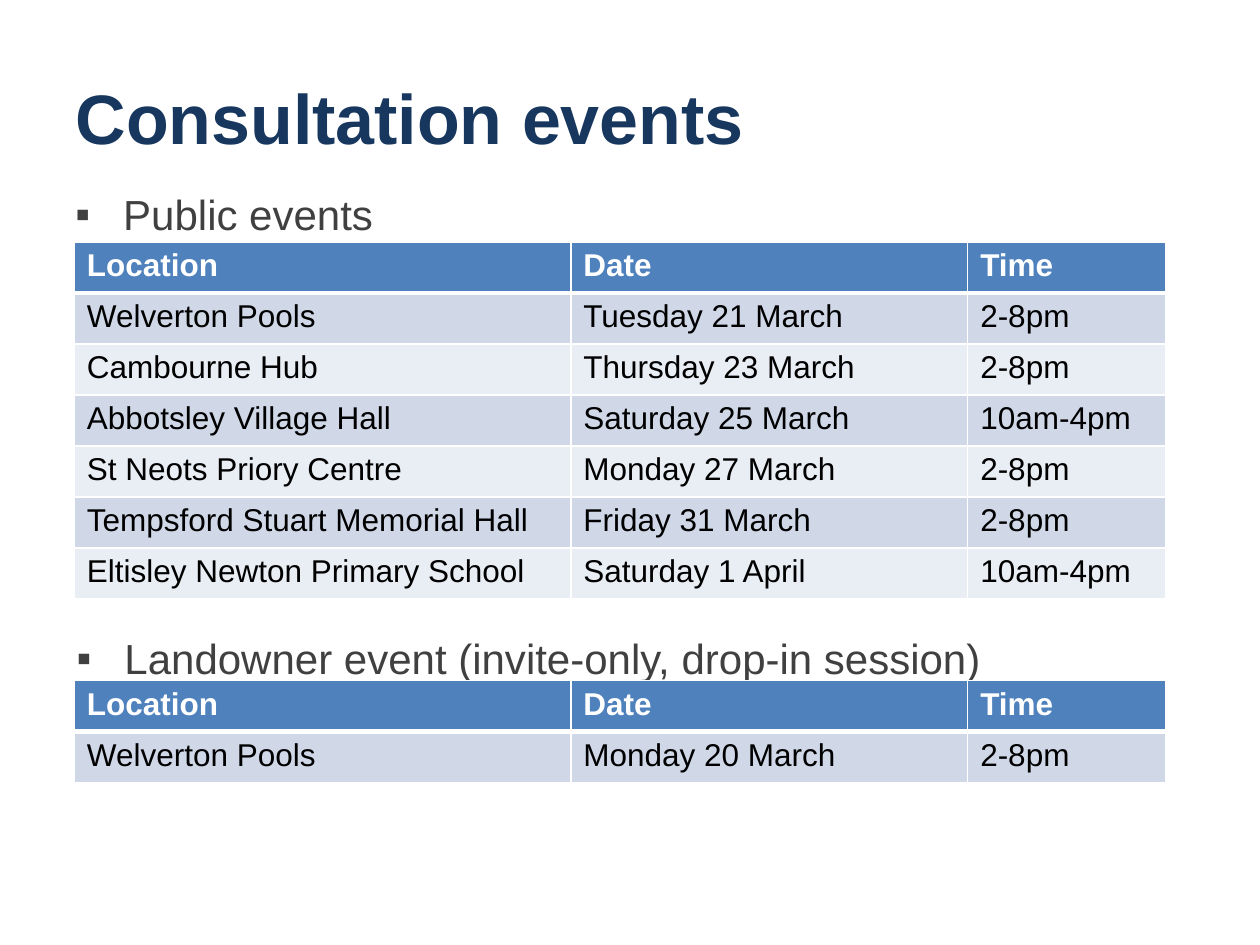
from dataclasses import dataclass

from lxml.etree import SubElement
from pptx import Presentation
from pptx.dml.color import RGBColor
from pptx.enum.text import MSO_ANCHOR, PP_ALIGN
from pptx.oxml.ns import qn
from pptx.util import Inches, Pt


@dataclass(frozen=True)
class Theme:
    font: str = "Arial"
    title: str = "17375E"
    body: str = "404040"
    header: str = "4F81BD"
    bands: tuple[str, str] = ("D0D8E8", "E9EDF4")
    white: str = "FFFFFF"
    black: str = "000000"
    title_size: int = 40
    body_size: int = 24
    cell_size: int = 18


@dataclass(frozen=True)
class EventGroup:
    heading: str
    heading_left: float
    heading_top: float
    table_top: float
    events: tuple[tuple[str, str, str], ...]


THEME = Theme()
COLUMNS = ("Location", "Date", "Time")
COL_WIDTHS = (3.94, 3.15, 1.57)
TABLE_LEFT = 0.59
ROW_HEIGHT = 0.405
INDENT = 0.38

GROUPS = (
    EventGroup("Public events", 0.5, 1.41, 1.92, (
        ("Welverton Pools", "Tuesday 21 March", "2-8pm"),
        ("Cambourne Hub", "Thursday 23 March", "2-8pm"),
        ("Abbotsley Village Hall", "Saturday 25 March", "10am-4pm"),
        ("St Neots Priory Centre", "Monday 27 March", "2-8pm"),
        ("Tempsford Stuart Memorial Hall", "Friday 31 March", "2-8pm"),
        ("Eltisley Newton Primary School", "Saturday 1 April", "10am-4pm"),
    )),
    EventGroup("Landowner event (invite-only, drop-in session)", 0.51, 4.93, 5.4, (
        ("Welverton Pools", "Monday 20 March", "2-8pm"),
    )),
)


def style_text(p, size: int, color: str, bold: bool = False) -> None:
    for r in p.runs:
        r.font.name = THEME.font
        r.font.size = Pt(size)
        r.font.bold = bold
        r.font.color.rgb = RGBColor.from_string(color)


def add_title(slide, text: str) -> None:
    sp = slide.shapes.title
    sp.left, sp.top, sp.width, sp.height = map(Inches, (0.5, 0.3, 9, 1.25))
    tf = sp.text_frame
    tf.text = text
    tf.vertical_anchor = MSO_ANCHOR.MIDDLE
    p = tf.paragraphs[0]
    p.alignment = PP_ALIGN.LEFT
    style_text(p, THEME.title_size, THEME.title, bold=True)


def add_heading(slide, group: EventGroup) -> None:
    sp = slide.shapes.add_textbox(
        Inches(group.heading_left), Inches(group.heading_top), Inches(9), Inches(0.66))
    tf = sp.text_frame
    tf.word_wrap = True
    tf.margin_top = Inches(0.09)
    tf.text = group.heading
    p = tf.paragraphs[0]
    # Hanging square bullet
    pPr = p._p.get_or_add_pPr()
    pPr.set("marL", str(Inches(INDENT)))
    pPr.set("indent", str(-Inches(INDENT)))
    SubElement(pPr, qn("a:buFont"), typeface=THEME.font)
    SubElement(pPr, qn("a:buChar"), char="▪")
    style_text(p, THEME.body_size, THEME.body)


def set_borders(cell, top: float, bottom: float) -> None:
    tcPr = cell._tc.get_or_add_tcPr()
    for side, width in (("L", 1), ("R", 1), ("T", top), ("B", bottom)):
        ln = SubElement(tcPr, qn(f"a:ln{side}"), w=str(Pt(width)))
        fill = SubElement(ln, qn("a:solidFill"))
        SubElement(fill, qn("a:srgbClr"), val=THEME.white)


def add_event_table(slide, group: EventGroup) -> None:
    rows = (COLUMNS, *group.events)
    table = slide.shapes.add_table(
        len(rows), len(COLUMNS), Inches(TABLE_LEFT), Inches(group.table_top),
        Inches(sum(COL_WIDTHS)), Inches(ROW_HEIGHT * len(rows))).table
    for column, width in zip(table.columns, COL_WIDTHS):
        column.width = Inches(width)
    for i, row in enumerate(rows):
        is_header = i == 0
        fill = THEME.header if is_header else THEME.bands[(i - 1) % 2]
        color = THEME.white if is_header else THEME.black
        for j, text in enumerate(row):
            cell = table.cell(i, j)
            cell.text = text
            # A thick rule separates the header from the events
            set_borders(cell, top=3 if i == 1 else 1, bottom=3 if is_header else 1)
            cell.fill.solid()
            cell.fill.fore_color.rgb = RGBColor.from_string(fill)
            style_text(cell.text_frame.paragraphs[0], THEME.cell_size, color, is_header)


def main() -> None:
    prs = Presentation()
    prs.slide_width, prs.slide_height = Inches(10), Inches(7.5)
    slide = prs.slides.add_slide(prs.slide_layouts[5])
    add_title(slide, "Consultation events")
    # Each group is a bulleted heading over its table
    for group in GROUPS:
        add_heading(slide, group)
        add_event_table(slide, group)
    prs.save("out.pptx")


if __name__ == "__main__":
    main()
